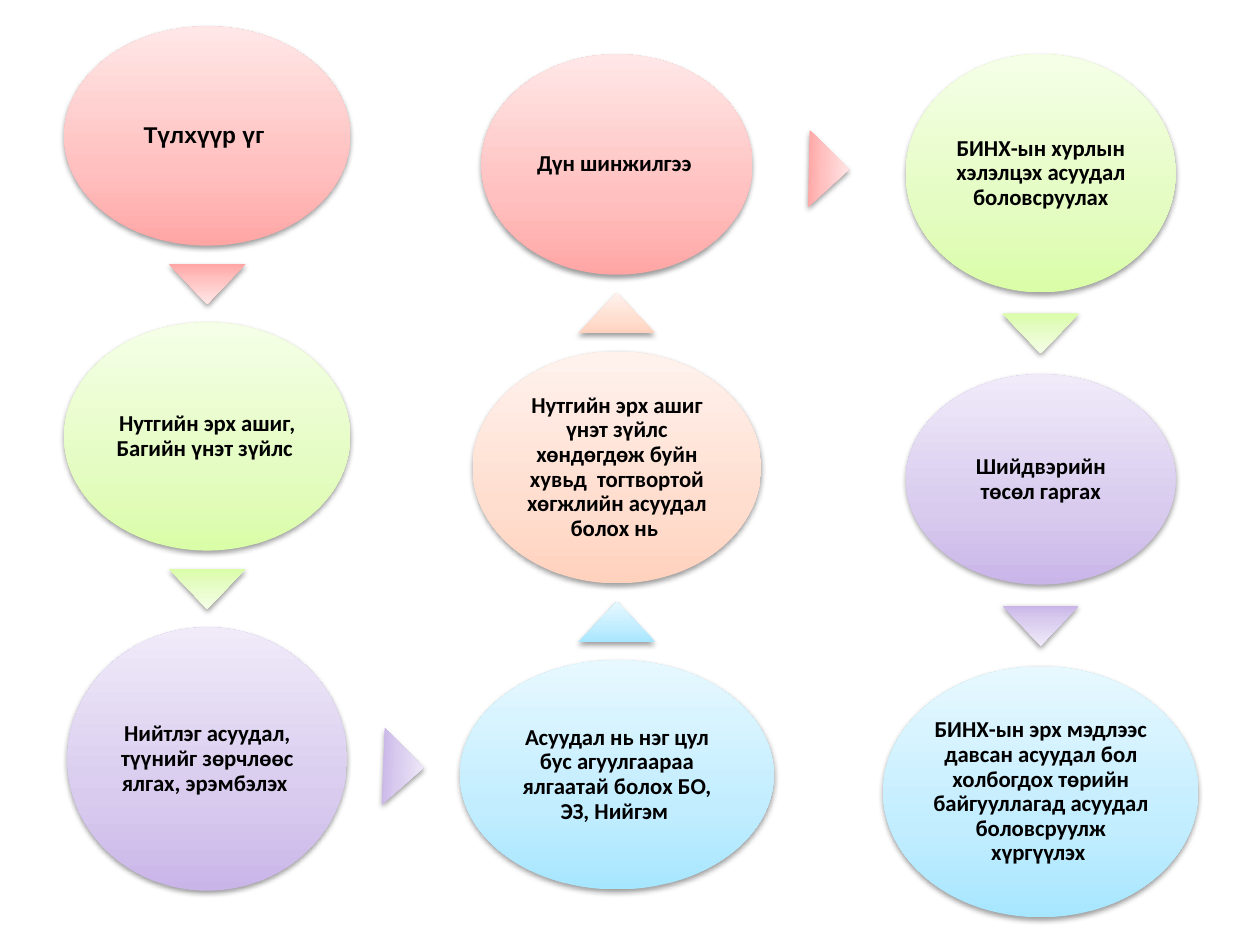
import math
from lxml import etree
from pptx import Presentation
from pptx.dml.color import RGBColor
from pptx.enum import shapes, text
from pptx.oxml.ns import qn
from pptx.util import Pt

COLORS = {
    "red": ("FFA6A5", "FFC0BF", "FFE7E7"),
    "green": ("DAFDA7", "E4FCC2", "F5FFE7"),
    "purple": ("C9B5E8", "D8CBEE", "F0EAF9"),
    "blue": ("A7E6FF", "C1EDFF", "E7F8FF"),
    "orange": ("FFD2BD", "FFDED0", "FFF2ED"),
    "black": "000000",
}
COLUMNS = [
    {"center": 118.4, "start": 15.1, "gap": 43.9, "direction": 1, "steps": [
        ("Түлхүүр үг ", "red", 163.4, 125.3, "Arial"),
        ("Нутгийн эрх ашиг, Багийн үнэт зүйлс ", "green", 163.4, 130.3, "Calibri"),
        ("Нийтлэг асуудал, түүнийг зөрчлөөс ялгах, эрэмбэлэх ",
         "purple", 159.8, 150.5, "Calibri"),
    ]},
    {"center": 352.5, "start": 508.3, "gap": 43.9, "direction": -1, "steps": [
        ("Асуудал нь нэг цул бус агуулгаараа ялгаатай болох БО, ЭЗ, Нийгэм ",
         "blue", 179.3, 131, "Calibri"),
        ("Нутгийн эрх ашиг үнэт зүйлс хөндөгдөж буйн хувьд  тогтвортой "
         "хөгжлийн асуудал болох нь ", "orange", 164.9, 132.5, "Calibri"),
        ("Дүн шинжилгээ ", "red", 154.8, 126, "Calibri"),
    ]},
    {"center": 594.7, "start": 31, "gap": 46.8, "direction": 1, "steps": [
        ("БИНХ-ын хурлын хэлэлцэх асуудал боловсруулах",
         "green", 154.1, 136.1, "Calibri"),
        ("Шийдвэрийн төсөл гаргах", "purple", 154.1, 120.2, "Calibri"),
        ("БИНХ-ын эрх мэдлээс давсан асуудал бол холбогдох төрийн "
         "байгууллагад асуудал боловсруулж хүргүүлэх ", "blue", 180, 143.3, "Calibri"),
    ]},
]
ARROW_W, ARROW_H = 43.9, 23
INSET = 1.4


def add_gradient_shape(s, kind, cx, cy, w, h, color):
    sp = s.shapes.add_shape(kind, Pt(cx - w / 2), Pt(cy - h / 2), Pt(w), Pt(h))
    sp.line.fill.background()
    sp.shadow.inherit = False
    props = sp._element.spPr
    grad = etree.Element(qn("a:gradFill"), rotWithShape="1")
    stops = etree.SubElement(grad, qn("a:gsLst"))
    for pos, value in zip((0, 35000, 100000), COLORS[color]):
        stop = etree.SubElement(stops, qn("a:gs"), pos=str(pos))
        etree.SubElement(stop, qn("a:srgbClr"), val=value)
    etree.SubElement(grad, qn("a:lin"), ang="16200000", scaled="1")
    props.find(qn("a:prstGeom")).addnext(grad)
    shadow = etree.SubElement(
        props.find(qn("a:effectLst")), qn("a:outerShdw"), blurRad=str(Pt(3.15)),
        dist=str(Pt(1.6)), dir="5400000", rotWithShape="0")
    shade = etree.SubElement(shadow, qn("a:srgbClr"), val=COLORS["black"])
    etree.SubElement(shade, qn("a:alpha"), val="38000")
    return sp


def add_label(sp, label, font):
    tf = sp.text_frame
    tf.word_wrap = True
    tf.vertical_anchor = text.MSO_ANCHOR.MIDDLE
    tf.margin_left = tf.margin_right = tf.margin_top = tf.margin_bottom = Pt(INSET)
    p = tf.paragraphs[0]
    p.alignment = text.PP_ALIGN.CENTER
    p.line_spacing = 0.9
    r = p.add_run()
    r.text = label
    r.font.name = font
    r.font.size = Pt(13)
    r.font.bold = True
    r.font.color.rgb = RGBColor.from_string(COLORS["black"])


def add_step_arrow(s, a, b):
    dx, dy = b["x"] - a["x"], b["y"] - a["y"]
    cx, cy = (a["x"] + b["x"]) / 2, (a["y"] + b["y"]) / 2
    if dx:
        cx += (a["w"] - b["w"]) / 4
    else:
        cy += math.copysign((a["h"] - b["h"]) / 4, dy * (a["h"] - b["h"]))
    sp = add_gradient_shape(s, shapes.MSO_SHAPE.ISOSCELES_TRIANGLE,
                            cx, cy, ARROW_W, ARROW_H, a["color"])
    sp.rotation = 90 + math.degrees(math.atan2(dy, dx))


def main():
    prs = Presentation()
    prs.slide_width, prs.slide_height = Pt(720), Pt(540)
    s = prs.slides.add_slide(prs.slide_layouts[6])
    placed = []
    for column in COLUMNS:
        edge = column["start"]
        for label, color, w, h, font in column["steps"]:
            y = edge + column["direction"] * h / 2
            sp = add_gradient_shape(s, shapes.MSO_SHAPE.OVAL,
                                    column["center"], y, w, h, color)
            add_label(sp, label, font)
            placed.append({"x": column["center"], "y": y, "w": w, "h": h, "color": color})
            edge += column["direction"] * (h + column["gap"])
    for a, b in zip(placed, placed[1:]):
        add_step_arrow(s, a, b)
    prs.save("out.pptx")


if __name__ == "__main__":
    main()
